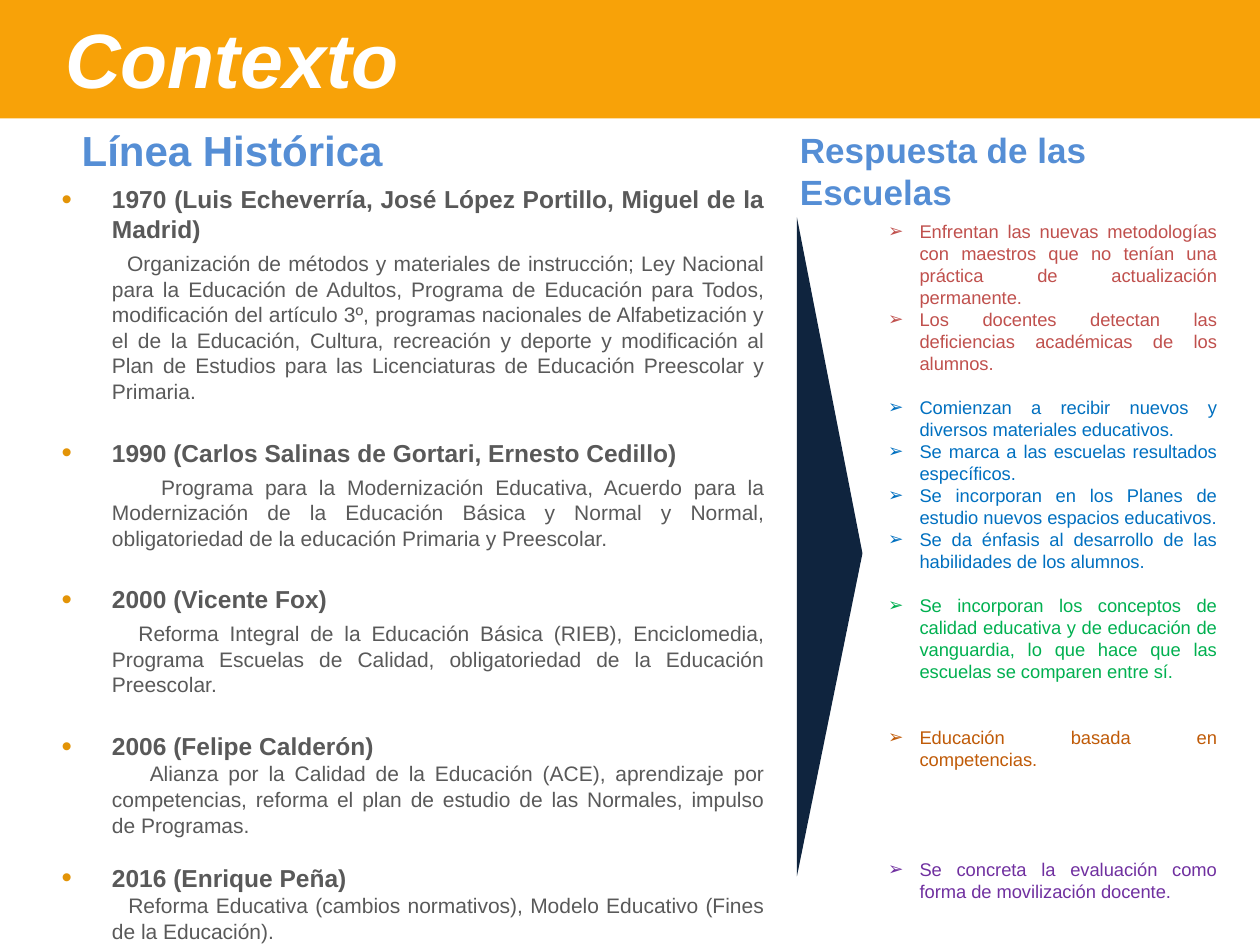
import pptx
import pptx.util
import pptx.dml.color
import pptx.enum.shapes
import pptx.enum.text
import lxml.etree

UNIT = 0.1
HUES = {
    "band": "F8A208", "white": "FFFFFF", "head": "558ED5", "text": "595959",
    "dot": "E39407", "arrow": "0F243E", "red": "C0504D", "blue": "0070C0",
    "green": "00B050", "brown": "C05B08", "plum": "7030A0",
}
ERAS = [
    (0, "1970 (Luis Echeverría, José López Portillo, Miguel de la Madrid)", 3.8, 0.12,
     "Organización de métodos y materiales de instrucción; Ley Nacional para la "
     "Educación de Adultos, Programa de Educación para Todos, modificación del "
     "artículo 3º, programas nacionales de Alfabetización y el de la Educación, "
     "Cultura, recreación y deporte y modificación al Plan de Estudios para las "
     "Licenciaturas de Educación Preescolar y Primaria."),
    (19.2, "1990 (Carlos Salinas de Gortari, Ernesto Cedillo)", 3.8, 0.39,
     "Programa para la Modernización Educativa, Acuerdo para la Modernización de la "
     "Educación Básica y Normal y Normal, obligatoriedad de la educación Primaria y "
     "Preescolar."),
    (19.2, "2000 (Vicente Fox)", 3.8, 0.21,
     "Reforma Integral de la Educación Básica (RIEB), Enciclomedia, Programa Escuelas "
     "de Calidad, obligatoriedad de la Educación Preescolar."),
    (19.2, "2006 (Felipe Calderón)", 0, 0.3,
     "Alianza por la Calidad de la Educación (ACE), aprendizaje por competencias, "
     "reforma el plan de estudio de las Normales, impulso de Programas."),
    (14.3, "2016 (Enrique Peña)", 0, 0.13,
     "Reforma Educativa (cambios normativos), Modelo Educativo (Fines de la Educación)."),
]
REPLIES = [
    ("red", 0, [
        "Enfrentan las nuevas metodologías con maestros que no tenían una práctica de "
        "actualización permanente.",
        "Los docentes detectan las deficiencias académicas de los alumnos."]),
    ("blue", 1, [
        "Comienzan a recibir nuevos y diversos materiales educativos.",
        "Se marca a las escuelas resultados específicos.",
        "Se incorporan en los Planes de estudio nuevos espacios educativos.",
        "Se da énfasis al desarrollo de las habilidades de los alumnos."]),
    ("green", 1, [
        "Se incorporan los conceptos de calidad educativa y de educación de vanguardia, "
        "lo que hace que las escuelas se comparen entre sí."]),
    ("brown", 2, ["Educación basada en competencias."]),
    ("plum", 4, ["Se concreta la evaluación como forma de movilización docente."]),
]


def span(count):
    """Turn grid units into a length."""
    return pptx.util.Inches(count * UNIT)


def tint(name):
    """Look up a colour by its name."""
    return pptx.dml.color.RGBColor.from_string(HUES[name])


def block(slide, kind, box, hue):
    """Place a plain filled shape."""
    shape = slide.shapes.add_shape(kind, *map(span, box))
    shape.shadow.inherit = False
    shape.fill.solid()
    shape.fill.fore_color.rgb = tint(hue)
    shape.line.fill.background()
    return shape


def frame(slide, box, wrap=True):
    """Place an empty text box and return its frame."""
    text = slide.shapes.add_textbox(*map(span, box)).text_frame
    text.word_wrap = wrap
    return text


def style(para, size, hue, bold=False):
    """Set the font of a paragraph."""
    font = para.font
    font.name, font.size, font.bold = "Arial", pptx.util.Pt(size), bold
    font.color.rgb = tint(hue)


def mark(para, sign, hue=None):
    """Give a paragraph a bullet, coloured and enlarged if a hue is named."""
    props = para._p.get_or_add_pPr()
    space = "{http://schemas.openxmlformats.org/drawingml/2006/main}"
    if hue:
        tone = lxml.etree.SubElement(props, space + "buClr")
        lxml.etree.SubElement(tone, space + "srgbClr", val=HUES[hue])
        lxml.etree.SubElement(props, space + "buSzPct", val="120000")
    lxml.etree.SubElement(props, space + "buFont", typeface="Arial")
    lxml.etree.SubElement(props, space + "buChar", char=sign)


def entry(text, words, left, first, lead, gap):
    """Add a justified paragraph with its indents and spacing."""
    para = text.paragraphs[0]
    if para.runs:
        para = text.add_paragraph()
    para.add_run().text = words
    para.alignment = pptx.enum.text.PP_ALIGN.JUSTIFY
    para.line_spacing = pptx.util.Pt(lead)
    para.space_before = pptx.util.Pt(gap)
    props = para._p.get_or_add_pPr()
    props.set("marL", str(pptx.util.Inches(left)))
    props.set("indent", str(pptx.util.Inches(first)))
    return para


def label(slide, box, words, size):
    """Place a column heading."""
    para = frame(slide, box, False).paragraphs[0]
    para.add_run().text = words
    style(para, size, "head", True)


def banner(slide, box):
    """Draw the top band and its title."""
    left, top, width, height = box
    block(slide, pptx.enum.shapes.MSO_SHAPE.RECTANGLE, box, "band")
    text = frame(slide, (left + 4.2, top + 2.1, width - 15.5, height - 4.4))
    text.vertical_anchor = pptx.enum.text.MSO_ANCHOR.MIDDLE
    para = text.paragraphs[0]
    para.add_run().text = "Contexto"
    style(para, 44, "white", True)
    para.font.italic = True


def history(slide, box):
    """Draw the column of eras."""
    left, top, width, height = box
    label(slide, (left + 1.6, top, 26.6, 5), "Línea Histórica", 24)
    text = frame(slide, (left, top + 4.7, width, height - 4.7))
    for gap, title, drop, first, words in ERAS:
        para = entry(text, title, 0.4, -0.4, 17.1, gap)
        mark(para, "•", "dot")
        style(para, 14, "text", True)
        style(entry(text, words, 0.4, first, 14.6, drop), 12, "text")


def arrow(slide, box):
    """Draw the tall triangle that points to the right."""
    left, top, width, height = box
    turned = (left + (width - height) / 2, top + (height - width) / 2, height, width)
    shape = block(slide, pptx.enum.shapes.MSO_SHAPE.ISOSCELES_TRIANGLE, turned, "arrow")
    shape.rotation = 90
    shape.adjustments[0] = 0.51


def replies(slide, box):
    """Draw the column of answers from the schools."""
    left, top, width, height = box
    label(slide, (left, top, width, 4.4), "Respuesta de las Escuelas", 20)
    text = frame(slide, (left + 7, top + 5.9, 28.1, height - 5.9))
    text.margin_top = span(1.9)
    lead = 12.57
    for hue, lines, points in REPLIES:
        for turn, words in enumerate(points):
            gap = 0 if turn else lines * lead
            para = entry(text, words, 0.25, -0.25, lead, gap)
            mark(para, "➢")
            style(para, 10.5, hue)


def main():
    """Build the slide and save it."""
    deck = pptx.Presentation()
    deck.slide_width, deck.slide_height = span(100), span(75)
    slide = deck.slides.add_slide(deck.slide_layouts[6])
    banner(slide, (0, 0, 100, 9.4))
    history(slide, (3.9, 9.4, 57.8, 65.6))
    arrow(slide, (63.25, 17.25, 5.2, 52.3))
    replies(slide, (62.5, 9.7, 37.5, 63.5))
    deck.save("out.pptx")


if __name__ == "__main__":
    main()
